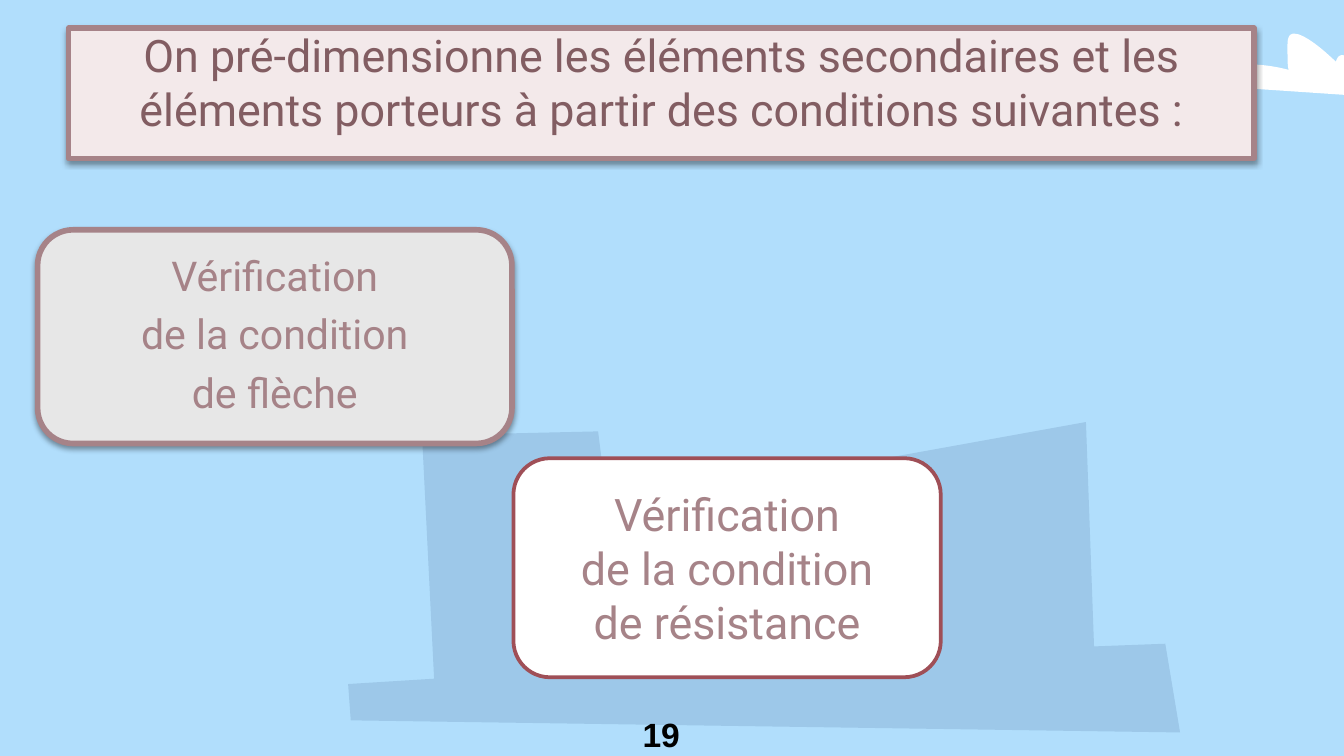
from lxml import etree
from pptx import Presentation
from pptx import util as u
from pptx.dml.color import RGBColor
from pptx.enum import shapes, text
from pptx.oxml.ns import qn

ROSE = "A68388"
SKYLINE = [
    (3.14, 3.24), (4.45, 3.21), (4.65, 4.81), (5.35, 4.76), (5.44, 3.98),
    (6.3, 3.9), (6.28, 4.77), (6.75, 4.8), (6.64, 3.4), (8.08, 3.14),
    (8.14, 4.81), (8.67, 4.79), (8.78, 5.45), (2.61, 5.36), (2.59, 5.09),
    (3.23, 5.05),
]
CLOUD_START = (9.63, 0.25)
CLOUD_CURVES = [
    ((9.6, 0.25), (9.58, 0.27), (9.58, 0.33)),
    ((9.58, 0.46), (9.58, 0.5), (9.59, 0.52)),
    ((9.55, 0.51), (9.43, 0.48), (9.31, 0.48)),
    ((9.19, 0.48), (9.06, 0.51), (9.02, 0.64)),
    ((9.02, 0.64), (10.36, 0.73), (10.36, 0.73)),
    ((10.36, 0.73), (10.11, 0.41), (9.99, 0.41)),
    ((9.97, 0.41), (9.95, 0.42), (9.94, 0.46)),
    ((9.94, 0.46), (9.73, 0.25), (9.63, 0.25)),
]


def color(hex_value):
    """Turn a hex string into a colour."""
    return RGBColor.from_string(hex_value)


def curve_points(start, curves, steps=10):
    """Sample a chain of cubic curves as points."""
    points = [start]
    for first, second, end in curves:
        begin = points[-1]
        for step in range(1, steps + 1):
            t = step / steps
            weights = ((1 - t) ** 3, 3 * t * (1 - t) ** 2, 3 * t * t * (1 - t), t ** 3)
            corners = (begin, first, second, end)
            points.append(tuple(sum(w * c[axis] for w, c in zip(weights, corners))
                                for axis in (0, 1)))
    return points


def add_silhouette(slide, points, fill):
    """Draw a filled outline without a border."""
    outline = [(u.Inches(x), u.Inches(y)) for x, y in points]
    builder = slide.shapes.build_freeform(*outline[0])
    builder.add_line_segments(outline[1:], close=True)
    silhouette = builder.convert_to_shape()
    silhouette.shadow.inherit = False
    silhouette.fill.solid()
    silhouette.fill.fore_color.rgb = color(fill)
    silhouette.line.fill.background()


def add_soft_shadow(panel):
    """Cast a short downward shadow below a panel."""
    effects = panel._element.spPr.find(qn("a:effectLst"))
    shadow = etree.SubElement(effects, qn("a:outerShdw"), blurRad=str(u.Pt(3.1)),
                              dist=str(u.Pt(1.6)), dir="5400000", rotWithShape="0")
    tint = etree.SubElement(shadow, qn("a:srgbClr"), val="000000")
    etree.SubElement(tint, qn("a:alpha"), val="38000")


def add_panel(slide, preset, box, fill, border, width, shadow=False):
    """Add a bordered panel and return it."""
    panel = slide.shapes.add_shape(preset, *map(u.Inches, box))
    panel.shadow.inherit = False
    panel.fill.solid()
    panel.fill.fore_color.rgb = color(fill)
    panel.line.color.rgb = color(border)
    panel.line.width = u.Pt(width)
    if shadow:
        add_soft_shadow(panel)
    return panel


def write(holder, lines, size, ink, font="Roboto", bold=False, inset=0.09,
          anchor=text.MSO_ANCHOR.MIDDLE, spacing=1.0, after=0):
    """Write centred paragraphs into a shape."""
    frame = holder.text_frame
    frame.word_wrap = True
    frame.vertical_anchor = anchor
    frame.margin_left = frame.margin_right = u.Inches(inset)
    frame.margin_top = frame.margin_bottom = u.Inches(inset)
    for index, line in enumerate(lines):
        paragraph = frame.add_paragraph() if index else frame.paragraphs[0]
        paragraph.alignment = text.PP_ALIGN.CENTER
        paragraph.line_spacing = spacing
        paragraph.space_after = u.Pt(after)
        run = paragraph.add_run()
        run.text = line
        run.font.name = font
        run.font.size = u.Pt(size)
        run.font.bold = bold
        run.font.color.rgb = color(ink)


def main():
    """Build the slide on design conditions."""
    deck = Presentation()
    deck.slide_width = u.Inches(10)
    deck.slide_height = deck.slide_width * 9 // 16
    slide = deck.slides.add_slide(deck.slide_layouts[6])
    slide.background.fill.solid()
    slide.background.fill.fore_color.rgb = color("B1DEFC")

    add_silhouette(slide, SKYLINE, "9DC8E9")
    add_silhouette(slide, curve_points(CLOUD_START, CLOUD_CURVES), "FFFFFF")

    rounded = shapes.MSO_SHAPE.ROUNDED_RECTANGLE
    deflection = add_panel(slide, rounded, (0.28, 1.71, 3.53, 1.59), "E7E7E7", ROSE, 3, True)
    write(deflection, ["Vérification", "de la condition", "de flèche"], 22, ROSE,
          spacing=0.9, after=7.7)

    heading = add_panel(slide, shapes.MSO_SHAPE.RECTANGLE, (0.51, 0.21, 8.82, 0.97),
                        "F3E9EA", ROSE, 3, True)
    write(heading, ["On pré-dimensionne les éléments secondaires et les éléments "
                    "porteurs à partir des conditions suivantes :"], 24, "825D62",
          inset=0, anchor=text.MSO_ANCHOR.TOP)

    resistance = add_panel(slide, rounded, (3.82, 3.41, 3.18, 1.63), "FFFFFF", "9F4F57", 2)
    write(resistance, ["Vérification", "de la condition", "de résistance"], 24, ROSE)

    page_number = slide.shapes.add_textbox(*map(u.Inches, (4.5, 5.26, 0.84, 0.4)))
    write(page_number, ["19"], 18, "000000", font="Arial", bold=True, inset=0.05,
          anchor=text.MSO_ANCHOR.TOP)
    deck.save("out.pptx")


if __name__ == "__main__":
    main()
